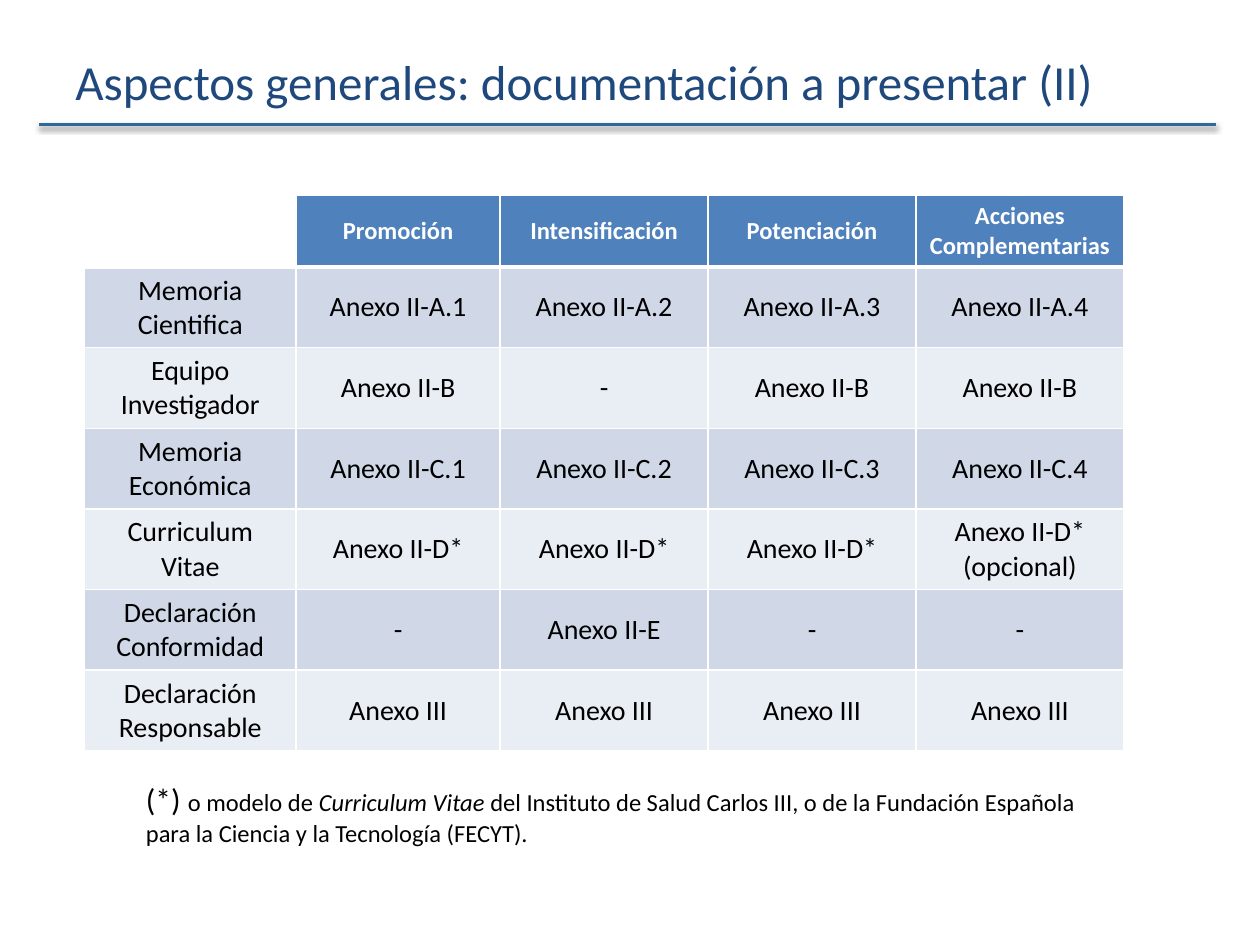
from lxml.etree import SubElement
from pptx import Presentation
from pptx.dml.color import RGBColor
from pptx.enum.shapes import MSO_CONNECTOR as Connector
from pptx.enum.text import MSO_ANCHOR as Anchor, PP_ALIGN as Align
from pptx.oxml import parse_xml
from pptx.oxml.ns import nsdecls, qn
from pptx.util import Inches, Pt


def color(hex_value):
    return RGBColor.from_string(hex_value)


class SlideBuilder:
    font_name = "Calibri"
    header_fill = "4F81BD"
    band_fills = ("D0D8E8", "E9EDF4")
    header_format = {"size": Pt(14), "bold": True}
    body_format = {"size": Pt(16), "bold": False}

    def __init__(self, slide):
        self.slide = slide

    def add_run(self, paragraph, text, hex_value, formats):
        run = paragraph.add_run()
        run.text = text
        run.font.name = self.font_name
        run.font.color.rgb = color(hex_value)
        for attribute, value in formats.items():
            setattr(run.font, attribute, value)

    def text(self, box, runs, hex_value="000000", anchor=Anchor.TOP):
        frame = self.slide.shapes.add_textbox(*map(Inches, box)).text_frame
        frame.word_wrap = True
        frame.vertical_anchor = anchor
        for text, formats in runs:
            self.add_run(frame.paragraphs[0], text, hex_value, formats)

    def rule(self, left, right, y, hex_value, width):
        line = self.slide.shapes.add_connector(
            Connector.STRAIGHT, Inches(left), Inches(y), Inches(right), Inches(y))
        line.line.color.rgb = color(hex_value)
        line.line.width = Pt(width)
        line._element.spPr.append(parse_xml(
            f'<a:effectLst {nsdecls("a")}>'
            f'<a:outerShdw blurRad="{Pt(3.1)}" dist="{Pt(1.6)}" dir="5400000">'
            '<a:srgbClr val="000000"><a:alpha val="38000"/></a:srgbClr>'
            '</a:outerShdw></a:effectLst>'))

    def border(self, cell, side, width):
        edge = SubElement(cell._tc.get_or_add_tcPr(), qn(f"a:ln{side}"), w=str(Pt(width)))
        fill = SubElement(edge, qn("a:solidFill"))
        SubElement(fill, qn("a:srgbClr"), val="FFFFFF")

    def cell(self, cell, text, row):
        is_header = row == 0
        widths = {"L": 1, "R": 1, "T": 3 if row == 1 else 1, "B": 3 if is_header else 1}
        for side, width in widths.items():
            self.border(cell, side, width)
        if not text:
            cell.fill.background()
            return
        cell.fill.solid()
        cell.fill.fore_color.rgb = color(
            self.header_fill if is_header else self.band_fills[(row - 1) % 2])
        cell.vertical_anchor = Anchor.MIDDLE
        paragraph = cell.text_frame.paragraphs[0]
        paragraph.alignment = Align.CENTER
        self.add_run(paragraph, text, "FFFFFF" if is_header else "000000",
                     self.header_format if is_header else self.body_format)

    def table(self, left, top, widths, heights, rows):
        table = self.slide.shapes.add_table(
            len(rows), len(widths), Inches(left), Inches(top),
            Inches(sum(widths)), Inches(sum(heights))).table
        table.first_row = table.horz_banding = False
        for column, width in zip(table.columns, widths):
            column.width = Inches(width)
        for row, (height, texts) in enumerate(zip(heights, rows)):
            table.rows[row].height = Inches(height)
            for column, text in enumerate(texts):
                self.cell(table.cell(row, column), text, row)


def main():
    deck = Presentation()
    deck.slide_width, deck.slide_height = Inches(10), Inches(7.5)
    builder = SlideBuilder(deck.slides.add_slide(deck.slide_layouts[6]))

    builder.rule(0.31, 9.65, 0.99, "336699", 2)
    builder.text(
        (0.5, 0.29, 9, 0.71),
        [("Aspectos generales: documentación a presentar (II)", {"size": Pt(28)})],
        "1F497D", Anchor.MIDDLE)

    annexes = [
        ["", "Promoción", "Intensificación", "Potenciación", "Acciones Complementarias"],
        ["Memoria Cientifica", "Anexo II-A.1", "Anexo II-A.2", "Anexo II-A.3", "Anexo II-A.4"],
        ["Equipo Investigador", "Anexo II-B", "-", "Anexo II-B", "Anexo II-B"],
        ["Memoria Económica", "Anexo II-C.1", "Anexo II-C.2", "Anexo II-C.3", "Anexo II-C.4"],
        ["Curriculum Vitae", "Anexo II-D*", "Anexo II-D*", "Anexo II-D*",
         "Anexo II-D* (opcional)"],
        ["Declaración Conformidad", "-", "Anexo II-E", "-", "-"],
        ["Declaración Responsable"] + ["Anexo III"] * 4,
    ]
    builder.table(0.67, 1.55, [1.68, 1.62] + [1.65] * 3, [0.57] + [0.64] * 6, annexes)

    note_format = {"size": Pt(14)}
    builder.text((1.06, 6.14, 7.87, 0.64), [
        ("(*) ", {"size": Pt(18)}),
        ("o modelo de ", note_format),
        ("Curriculum Vitae ", {**note_format, "italic": True}),
        ("del Instituto de Salud Carlos III, o de la Fundación Española "
         "para la Ciencia y la Tecnología (FECYT).", note_format),
    ])
    deck.save("out.pptx")


if __name__ == "__main__":
    main()
